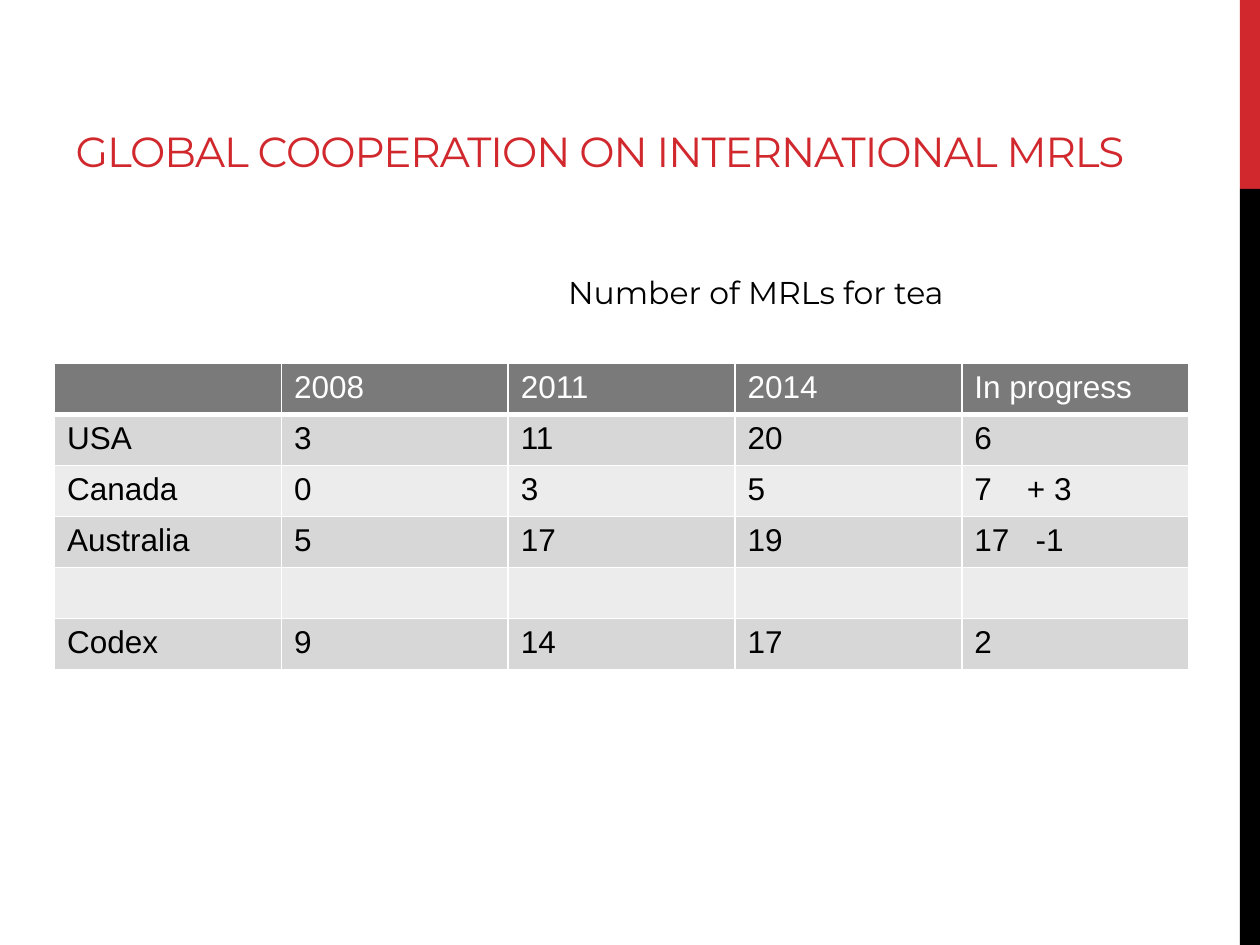
from lxml.etree import SubElement
from pptx import Presentation
from pptx.dml.color import RGBColor
from pptx.enum.shapes import MSO_SHAPE as Shape
from pptx.enum.text import MSO_ANCHOR as Anchor, MSO_AUTO_SIZE as AutoSize, PP_ALIGN as Align
from pptx.oxml.ns import qn
from pptx.util import Pt

RED, BLACK, WHITE = "D1282E", "000000", "FFFFFF"
HEADER, BANDS = "7A7A7A", ("D7D7D7", "ECECEC")
COL_W, ROW_H = 129.6, 29.16
MRL_ROWS = [
    ["", "2008", "2011", "2014", "In progress"],
    ["USA", "3", "11", "20", "6"],
    ["Canada", "0", "3", "5", "7\t+ 3"],
    ["Australia", "5", "17", "19", "17\t-1"],
    ["", "", "", "", ""],
    ["Codex", "9", "14", "17", "2"],
]
# Where the change starts within its cell, by row
CHANGE_TABS = {2: 30, 3: 35}


def rgb(color):
    return RGBColor.from_string(color)


def box(*lengths):
    return [Pt(v) for v in lengths]


def style_text(tf, size, font, color):
    for p in tf.paragraphs:
        p.alignment = Align.LEFT
        for r in p.runs:
            r.font.size, r.font.name = Pt(size), font
            r.font.color.rgb = rgb(color)


def add_bar(slide, top, height, color):
    sp = slide.shapes.add_shape(Shape.RECTANGLE, *box(708.5, top, 11.5, height))
    sp.shadow.inherit = False
    sp.fill.solid()
    sp.fill.fore_color.rgb = rgb(color)
    sp.line.fill.background()


def set_title(slide, text):
    sp = slide.shapes.title
    sp.left, sp.top, sp.width, sp.height = box(36, 12.24, 643, 92.16)
    tf = sp.text_frame
    tf.text = text
    tf.word_wrap = True
    tf.auto_size = AutoSize.NONE
    tf.vertical_anchor = Anchor.BOTTOM
    style_text(tf, 24, "Montserrat", RED)
    for r in tf.paragraphs[0].runs:
        r.font._element.set("spc", "-60")


def add_caption(slide, text):
    tf = slide.shapes.add_textbox(*box(317.5, 152.6, 317.5, 29.1)).text_frame
    tf.word_wrap = True
    tf.auto_size = AutoSize.SHAPE_TO_FIT_TEXT
    tf.text = text
    style_text(tf, 18, "Montserrat", BLACK)


def set_borders(cell, color, bottom):
    tc_pr = cell._tc.get_or_add_tcPr()
    for side, width in (("L", 1), ("R", 1), ("T", 1), ("B", bottom)):
        ln = SubElement(tc_pr, qn(f"a:ln{side}"), w=str(Pt(width)))
        fill = SubElement(ln, qn("a:solidFill"))
        SubElement(fill, qn("a:srgbClr"), val=color)


def set_tab(p, position):
    tabs = SubElement(p._p.get_or_add_pPr(), qn("a:tabLst"))
    SubElement(tabs, qn("a:tab"), pos=str(Pt(position)), algn="l")


def add_mrl_table(slide, rows):
    n_rows, n_cols = len(rows), len(rows[0])
    frame = slide.shapes.add_table(
        n_rows, n_cols, *box(31.2, 207.7, n_cols * COL_W, n_rows * ROW_H))
    table = frame.table
    for col in table.columns:
        col.width = Pt(COL_W)
    for i, values in enumerate(rows):
        table.rows[i].height = Pt(ROW_H)
        is_header = i == 0
        for j, value in enumerate(values):
            cell = table.cell(i, j)
            set_borders(cell, WHITE, 3 if is_header else 1)
            cell.fill.solid()
            cell.fill.fore_color.rgb = rgb(HEADER if is_header else BANDS[(i - 1) % 2])
            cell.text = value
            style_text(cell.text_frame, 18, "Arial", WHITE if is_header else BLACK)
            if "\t" in value:
                set_tab(cell.text_frame.paragraphs[0], CHANGE_TABS[i])


def main():
    prs = Presentation()
    prs.slide_width, prs.slide_height = box(720, 540)
    slide = prs.slides.add_slide(prs.slide_layouts[5])

    # Side bars
    add_bar(slide, 0, 108, RED)
    add_bar(slide, 108, 432, BLACK)

    # Title, table and caption
    set_title(slide, "GLOBAL COOPERATION ON INTERNATIONAL MRLS")
    add_mrl_table(slide, MRL_ROWS)
    add_caption(slide, "Number of MRLs for tea")

    prs.save("out.pptx")


if __name__ == "__main__":
    main()
